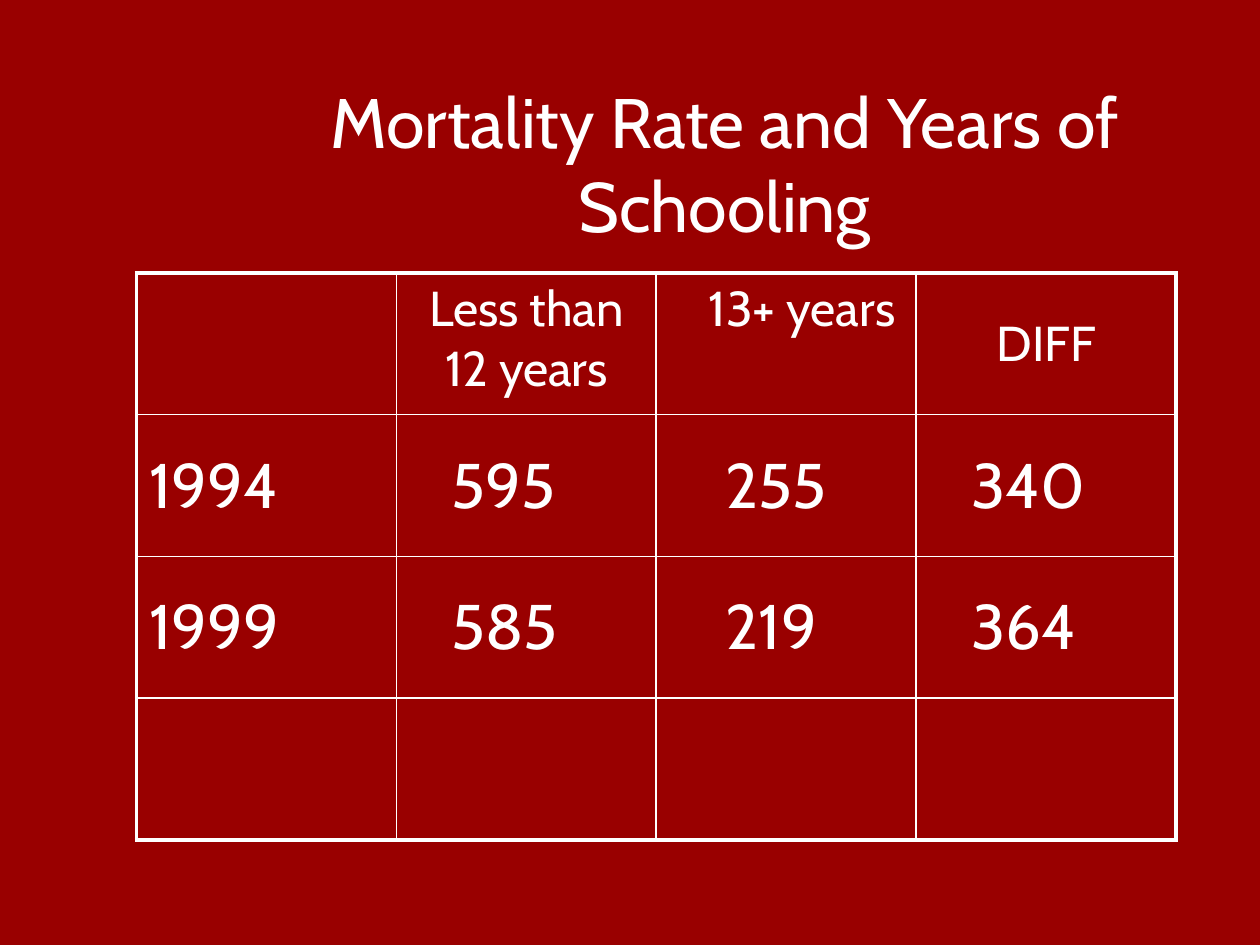
"""Build the slide on mortality rate and years of schooling."""
import dataclasses

import lxml.etree
import pptx
import pptx.dml.color
import pptx.enum.text
import pptx.oxml.ns
import pptx.slide
import pptx.table
import pptx.text.text
import pptx.util

PIXEL = 9525
RED = pptx.dml.color.RGBColor(0x99, 0x00, 0x00)
WHITE = pptx.dml.color.RGBColor(0xFF, 0xFF, 0xFF)
FONT = "Cabin"
THIN, THICK = 1, 2.25
ALIGN = pptx.enum.text.PP_ALIGN
ANCHOR = pptx.enum.text.MSO_ANCHOR
LEFT, TOP, COLUMN_WIDTH, ROW_HEIGHT = 104, 208, 198, 108


@dataclasses.dataclass(frozen=True)
class Entry:
    text: str = ""
    size: int = 36
    align: ALIGN = ALIGN.LEFT
    anchor: ANCHOR = ANCHOR.MIDDLE
    indent: int = 10


def heading(text: str, anchor: ANCHOR = ANCHOR.TOP, indent: int = 10) -> Entry:
    return Entry(text, 28, ALIGN.CENTER, anchor, indent)


def year_row(year: str, less: str, more: str, difference: str) -> list[Entry]:
    return [Entry(year), Entry(less, indent=42), Entry(more, indent=53), Entry(difference, indent=42)]


ROWS = [
    [Entry(), heading("Less than 12 years"), heading("13+ years", indent=34), heading("DIFF", ANCHOR.MIDDLE)],
    year_row("1994", "595", "255", "340"),
    year_row("1999", "585", "219", "364"),
    [Entry()] * 4,
]


def px(length: int) -> pptx.util.Emu:
    return pptx.util.Emu(length * PIXEL)


def set_values(target: object, values: dict[str, object]) -> None:
    for name, value in values.items():
        setattr(target, name, value)


def write(para: pptx.text.text._Paragraph, text: str, size: int, align: ALIGN) -> None:
    para.alignment = align
    span = para.add_run()
    span.text = text
    set_values(span.font, {"name": FONT, "size": pptx.util.Pt(size), "bold": False})
    span.font.color.rgb = WHITE


def add_border(cell: pptx.table._Cell, side: str, width: float) -> None:
    qn = pptx.oxml.ns.qn
    line = lxml.etree.SubElement(cell._tc.get_or_add_tcPr(), qn(f"a:ln{side}"), w=str(pptx.util.Pt(width)))
    fill = lxml.etree.SubElement(line, qn("a:solidFill"))
    lxml.etree.SubElement(fill, qn("a:srgbClr"), val=str(WHITE))


def add_title(page: pptx.slide.Slide, text: str) -> None:
    box = page.shapes.add_textbox(px(176), px(80), px(752), px(120))
    frame = box.text_frame
    set_values(frame, {"word_wrap": True, "vertical_anchor": ANCHOR.BOTTOM,
                       "margin_top": 0, "margin_bottom": px(12)})
    write(frame.paragraphs[0], text, 40, ALIGN.CENTER)


def add_grid(page: pptx.slide.Slide, rows: list[list[Entry]]) -> None:
    row_count, column_count = len(rows), len(rows[0])
    table = page.shapes.add_table(row_count, column_count, px(LEFT), px(TOP),
                                  px(COLUMN_WIDTH * column_count), px(ROW_HEIGHT * row_count)).table
    set_values(table, {"first_row": False, "horz_banding": False})
    for row, entries in enumerate(rows):
        for column, entry in enumerate(entries):
            cell = table.cell(row, column)
            outer = {"L": column == 0, "R": column == column_count - 1,
                     "T": row == 0, "B": row == row_count - 1}
            for side, is_outer in outer.items():
                add_border(cell, side, THICK if is_outer else THIN)
            cell.fill.background()
            set_values(cell, {"vertical_anchor": entry.anchor, "margin_left": px(entry.indent)})
            if entry.text:
                write(cell.text_frame.paragraphs[0], entry.text, entry.size, entry.align)


def main() -> None:
    deck = pptx.Presentation()
    set_values(deck, {"slide_width": px(960), "slide_height": px(720)})
    page = deck.slides.add_slide(deck.slide_layouts[6])
    page.background.fill.solid()
    page.background.fill.fore_color.rgb = RED
    add_title(page, "Mortality Rate and Years of Schooling")
    add_grid(page, ROWS)
    deck.save("out.pptx")


if __name__ == "__main__":
    main()
